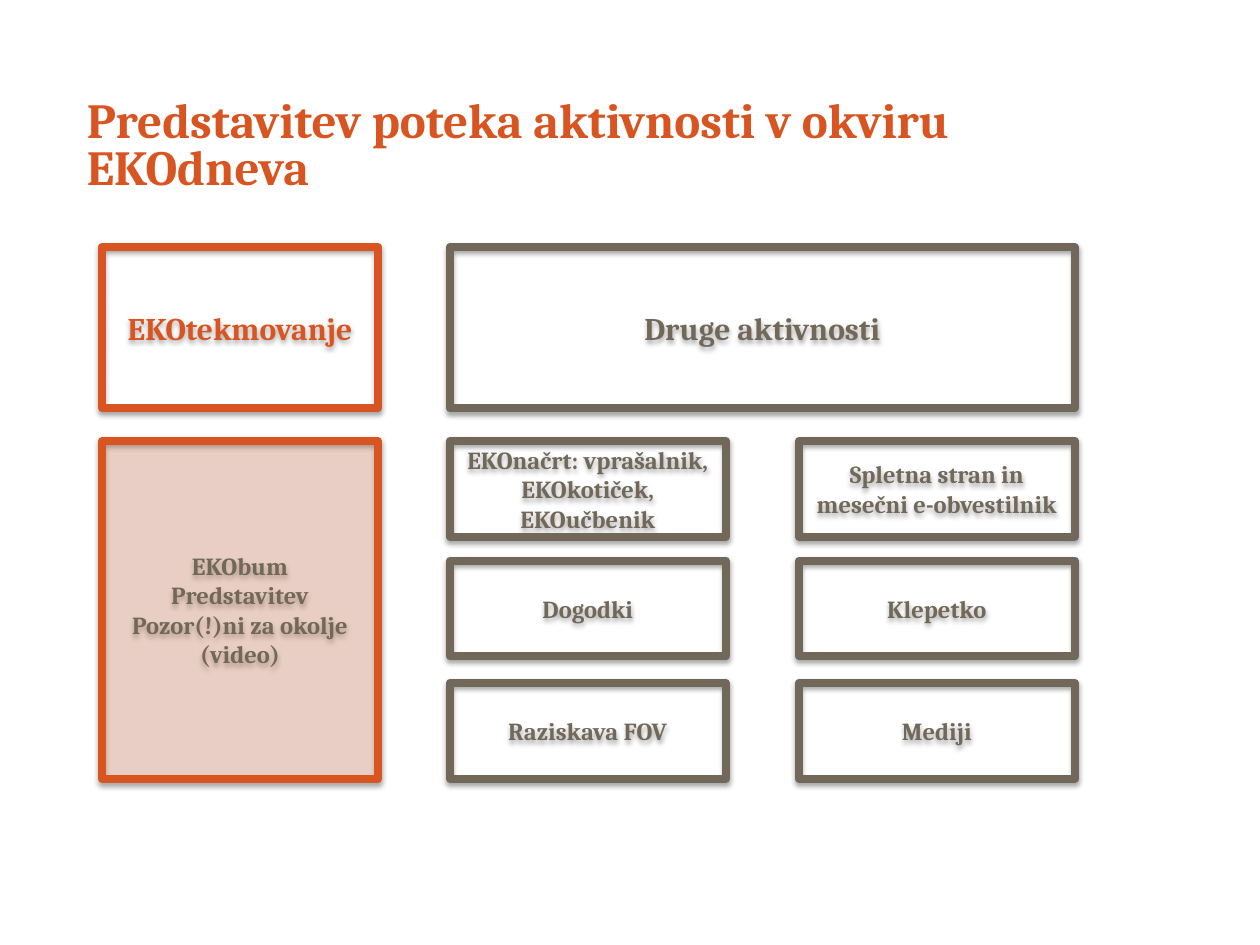
from lxml import etree
from pptx import Presentation
from pptx.dml.color import RGBColor
from pptx.enum.shapes import MSO_SHAPE
from pptx.enum.text import MSO_ANCHOR, PP_ALIGN
from pptx.oxml.ns import qn
from pptx.util import Inches, Pt

RECTANGLE = MSO_SHAPE.RECTANGLE
MIDDLE = MSO_ANCHOR.MIDDLE
LEFT, CENTER = PP_ALIGN.LEFT, PP_ALIGN.CENTER

ORANGE, BROWN = "D85421", "71685A"
FONT = "Cambria"

# Grid of boxes
COMPETITION_LEFT, COLUMN_WIDTH = 0.81, 2.19
ACTIVITY_COLUMNS = (3.57, 6.34)
ACTIVITY_ROWS = (3.5, 4.45, 5.42)
HEADER_TOP, HEADER_HEIGHT = 1.96, 1.28
ACTIVITY_HEIGHT = 0.76

ACTIVITIES = (
    ("EKOnačrt: vprašalnik, EKOkotiček, EKOučbenik", "Dogodki", "Raziskava FOV"),
    ("Spletna stran in mesečni e-obvestilnik", "Klepetko", "Mediji"),
)
COMPETITION_PARTS = ("EKObum", "Predstavitev", "Pozor(!)ni za okolje", "(video)")


def color(value):
    return RGBColor.from_string(value)


def add_child(parent, tag, **attributes):
    return etree.SubElement(parent, qn(tag), attributes)


def write_text(frame, lines, size, text_color, alignment, spacing=None):
    frame.word_wrap = True
    frame.vertical_anchor = MIDDLE
    font_format = {"name": FONT, "size": Pt(size), "bold": True}
    for index, line in enumerate(lines):
        para = frame.add_paragraph() if index else frame.paragraphs[0]
        para.alignment = alignment
        para.line_spacing = spacing
        span = para.add_run()
        span.text = line
        for key, value in font_format.items():
            setattr(span.font, key, value)
        span.font.color.rgb = color(text_color)


def add_shadow(box):
    box.shadow.inherit = False
    effects = box._element.spPr.find(qn("a:effectLst"))
    shadow = add_child(effects, "a:outerShdw", blurRad=str(Pt(3.1)),
                       dist=str(Pt(1.8)), dir="5400000", rotWithShape="0")
    black = add_child(shadow, "a:srgbClr", val="000000")
    add_child(black, "a:alpha", val="35000")


def add_box(page, place, lines, size, line_color, text_color, tint=None):
    box = page.shapes.add_shape(RECTANGLE, *map(Inches, place))
    # Fill, with the tint as a percentage of opacity
    if tint is None:
        box.fill.background()
    else:
        box.fill.solid()
        box.fill.fore_color.rgb = color(line_color)
        fill_color = box._element.spPr.find(qn("a:solidFill"))[0]
        add_child(fill_color, "a:alpha", val=str(tint * 1000))
    # Thick outline with rounded corners
    box.line.color.rgb = color(line_color)
    box.line.width = Pt(4.5)
    add_child(box._element.spPr.find(qn("a:ln")), "a:round")
    add_shadow(box)
    write_text(box.text_frame, lines, size, text_color, CENTER)


def add_title(page, text):
    title = page.shapes.add_textbox(*map(Inches, (0.59, 0.6, 7.39, 1.15)))
    write_text(title.text_frame, [text], 28, ORANGE, LEFT, 0.8)


def main():
    deck = Presentation()
    deck.slide_width, deck.slide_height = Inches(10), Inches(7.5)
    page = deck.slides.add_slide(deck.slide_layouts[6])

    add_title(page, "Predstavitev poteka aktivnosti v okviru EKOdneva")

    # Activities, column by column
    for left, names in zip(ACTIVITY_COLUMNS, ACTIVITIES):
        for top, name in zip(ACTIVITY_ROWS, names):
            place = (left, top, COLUMN_WIDTH, ACTIVITY_HEIGHT)
            add_box(page, place, [name], 14, BROWN, BROWN)

    # Headers
    first, last = ACTIVITY_COLUMNS
    headers = (
        ("EKOtekmovanje", COMPETITION_LEFT, COLUMN_WIDTH, ORANGE),
        ("Druge aktivnosti", first, last + COLUMN_WIDTH - first, BROWN),
    )
    for name, left, width, header_color in headers:
        place = (left, HEADER_TOP, width, HEADER_HEIGHT)
        add_box(page, place, [name], 18, header_color, header_color)

    # Competition contents, as tall as the activity rows together
    top = ACTIVITY_ROWS[0]
    height = ACTIVITY_ROWS[-1] + ACTIVITY_HEIGHT - top
    place = (COMPETITION_LEFT, top, COLUMN_WIDTH, height)
    add_box(page, place, COMPETITION_PARTS, 14, ORANGE, BROWN, tint=20)

    deck.save("out.pptx")


if __name__ == "__main__":
    main()
